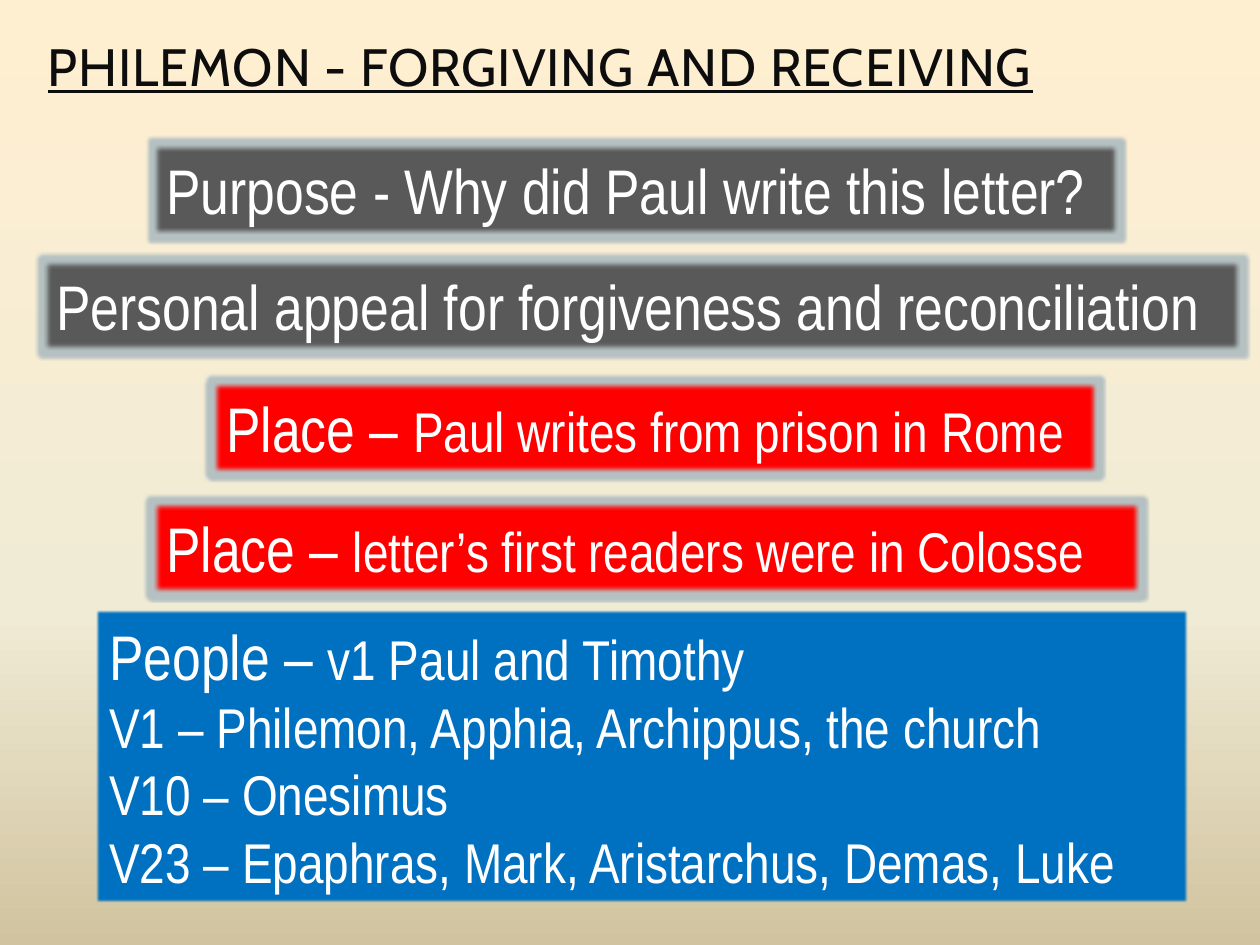
import copy
from dataclasses import dataclass

import pptx
import pptx.dml.color
import pptx.enum.shapes
import pptx.enum.text
import pptx.oxml
import pptx.oxml.ns
import pptx.util

EMU_PER_PX = 914400 / 126
BOX_HEIGHT = 89
LEAD_SIZE = 36
DETAIL_SIZE = 32

RGBColor = pptx.dml.color.RGBColor
CREAM = RGBColor(0xFF, 0xEF, 0xD1)
IVORY = RGBColor(0xF0, 0xEB, 0xD5)
SAND = RGBColor(0xD1, 0xC3, 0x9F)
INK = RGBColor(0x0D, 0x0D, 0x0D)
WHITE = RGBColor(0xFF, 0xFF, 0xFF)
GREY = RGBColor(0x59, 0x59, 0x59)
RED = RGBColor(0xFF, 0x00, 0x00)
BLUE = RGBColor(0x00, 0x70, 0xC0)
HALO = RGBColor(0xB5, 0xC1, 0xC2)


@dataclass
class Banner:
    left: int
    top: int
    width: int
    fill: RGBColor
    lead: str
    detail: str = ""
    lines: tuple[str, ...] = ()
    height: int = BOX_HEIGHT
    glow: bool = True


BANNERS = [
    Banner(154, 145, 963, GREY, "Purpose - Why did Paul write this letter?"),
    Banner(44, 261, 1196, GREY, "Personal appeal for forgiveness and reconciliation"),
    Banner(214, 383, 882, RED, "Place – ", "Paul writes from prison in Rome"),
    Banner(154, 503, 985, RED, "Place – ", "letter’s first readers were in Colosse"),
    Banner(
        97, 611, 1091, BLUE, "People – ", "v1 Paul and Timothy",
        (
            "V1 – Philemon, Apphia, Archippus, the church",
            "V10 – Onesimus",
            "V23 – Epaphras, Mark, Aristarchus, Demas, Luke",
        ),
        height=292, glow=False,
    ),
]


def px(length: int) -> pptx.util.Emu:
    return pptx.util.Emu(round(length * EMU_PER_PX))


def paint_background(slide: pptx.slide.Slide) -> None:
    fill = slide.background.fill
    fill.gradient()
    fill.gradient_angle = 270
    stop_list = slide.element.find(".//" + pptx.oxml.ns.qn("a:gsLst"))
    stop_list.append(copy.deepcopy(stop_list[-1]))
    stops = [(0, CREAM), (0.65, IVORY), (1, SAND)]
    for stop, (position, color) in zip(fill.gradient_stops, stops):
        stop.position = position
        stop.color.rgb = color


def style_run(run: pptx.text.text._Run, font_name: str, size: int, color: RGBColor) -> None:
    run.font.name = font_name
    run.font.size = pptx.util.Pt(size)
    run.font.color.rgb = color


def write_title(slide: pptx.slide.Slide, text: str) -> None:
    title = slide.shapes.title
    title.left, title.top, title.width, title.height = px(35), px(-4), px(1191), px(107)
    text_frame = title.text_frame
    text_frame.text = text
    text_frame.word_wrap = True
    text_frame.auto_size = pptx.enum.text.MSO_AUTO_SIZE.NONE
    text_frame.vertical_anchor = pptx.enum.text.MSO_ANCHOR.BOTTOM
    paragraph = text_frame.paragraphs[0]
    paragraph.alignment = pptx.enum.text.PP_ALIGN.LEFT
    run = paragraph.runs[0]
    style_run(run, "Cabin", 30, INK)
    run.font.underline = True
    run.font._element.set("spc", "50")


def soften_edges(shape: pptx.shapes.autoshape.Shape, glow: bool) -> None:
    shape.shadow.inherit = False
    effects = shape.element.spPr.find(pptx.oxml.ns.qn("a:effectLst"))
    namespace = pptx.oxml.ns.nsdecls("a")
    if glow:
        effects.append(pptx.oxml.parse_xml(
            f'<a:glow {namespace} rad="38100"><a:srgbClr val="{HALO}"/></a:glow>'
        ))
    radius = 25400 if glow else 12700
    effects.append(pptx.oxml.parse_xml(f'<a:softEdge {namespace} rad="{radius}"/>'))


def draw_banner(slide: pptx.slide.Slide, banner: Banner) -> None:
    shape = slide.shapes.add_shape(
        pptx.enum.shapes.MSO_SHAPE.RECTANGLE,
        px(banner.left), px(banner.top), px(banner.width), px(banner.height),
    )
    shape.fill.solid()
    shape.fill.fore_color.rgb = banner.fill
    shape.line.fill.background()
    soften_edges(shape, banner.glow)
    text_frame = shape.text_frame
    text_frame.text = "\n".join((banner.lead, *banner.lines))
    text_frame.word_wrap = True
    text_frame.auto_size = pptx.enum.text.MSO_AUTO_SIZE.SHAPE_TO_FIT_TEXT
    text_frame.vertical_anchor = pptx.enum.text.MSO_ANCHOR.TOP
    first_paragraph = text_frame.paragraphs[0]
    if banner.detail:
        first_paragraph.add_run().text = banner.detail
    for paragraph in text_frame.paragraphs:
        paragraph.alignment = pptx.enum.text.PP_ALIGN.LEFT
        for run in paragraph.runs:
            style_run(run, "Arial Narrow", DETAIL_SIZE, WHITE)
    first_paragraph.runs[0].font.size = pptx.util.Pt(LEAD_SIZE)


def main() -> None:
    presentation = pptx.Presentation()
    presentation.slide_width = px(1260)
    presentation.slide_height = px(945)
    slide = presentation.slides.add_slide(presentation.slide_layouts[5])
    paint_background(slide)
    write_title(slide, "PHILEMON - FORGIVING AND RECEIVING")
    for banner in BANNERS:
        draw_banner(slide, banner)
    presentation.save("out.pptx")


if __name__ == "__main__":
    main()
